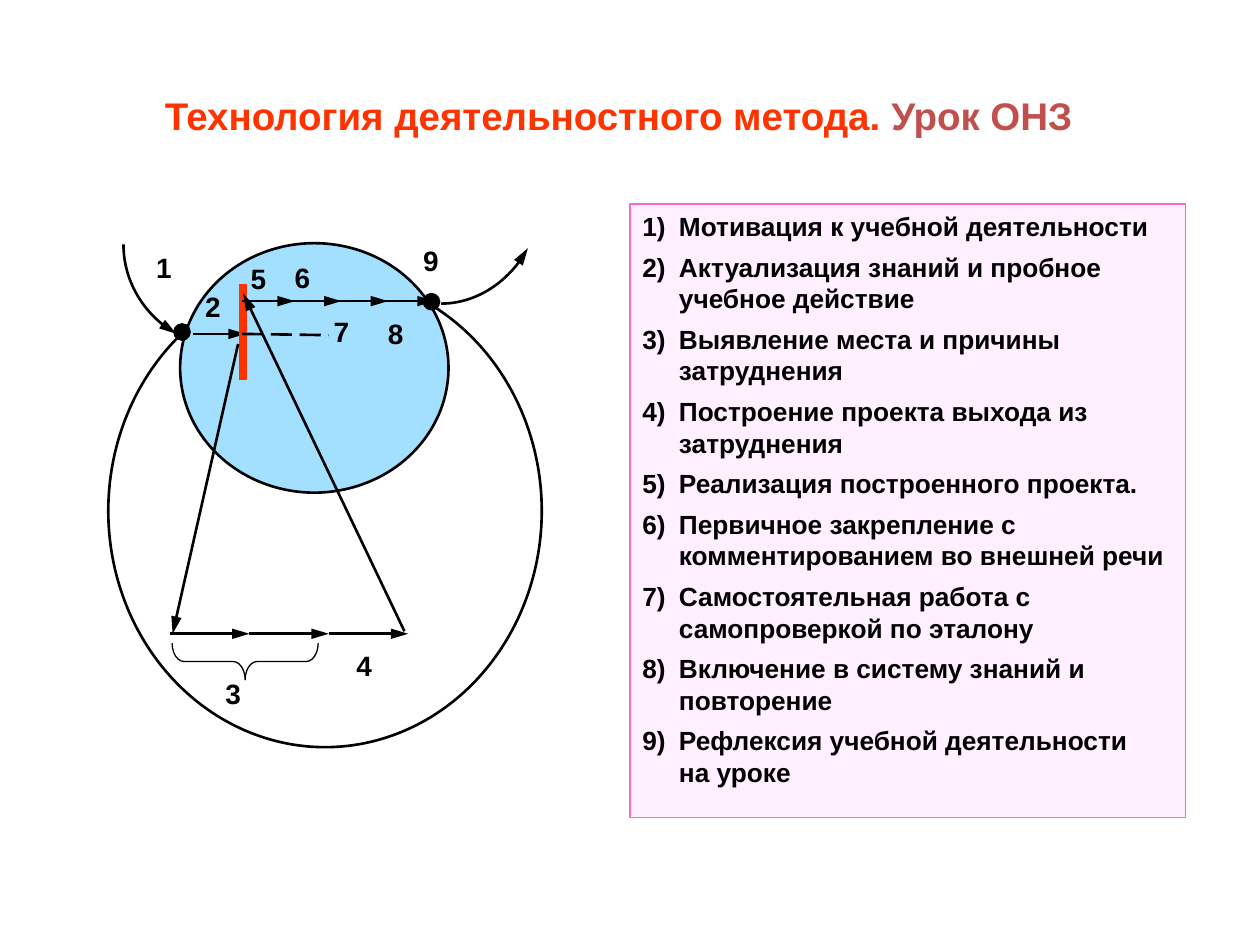
"""Build the lesson-structure slide: a cycle diagram beside its nine stages."""
from lxml import etree
from pptx import Presentation
from pptx import util as u
from pptx.dml.color import RGBColor
from pptx.enum import dml, shapes, text
from pptx.oxml import ns

BLACK = RGBColor(0x00, 0x00, 0x00)
WHITE = RGBColor(0xFF, 0xFF, 0xFF)
ORANGE = RGBColor(0xFF, 0x33, 0x00)
BRICK = RGBColor(0xC0, 0x50, 0x4D)
SKY = RGBColor(0xA3, 0xE0, 0xFF)
BLUSH = RGBColor(0xFF, 0xEF, 0xFF)
PINK = RGBColor(0xFF, 0x66, 0xCC)

STAGES = [
    "Мотивация к учебной деятельности",
    "Актуализация знаний и пробное учебное действие",
    "Выявление места и причины затруднения",
    "Построение проекта выхода из затруднения",
    "Реализация построенного проекта.",
    "Первичное закрепление с комментированием во внешней речи",
    "Самостоятельная работа с самопроверкой по эталону",
    "Включение в систему знаний и повторение",
    "Рефлексия учебной деятельности",
]
LABELS = {
    "1": (1.14, 1.94), "2": (1.53, 2.25), "5": (1.89, 2.03),
    "6": (2.24, 2.02), "9": (3.26, 1.88), "8": (2.98, 2.46),
    "3": (1.69, 5.32), "4": (2.73, 5.1), "7": (2.55, 2.45),
}


class Diagram:
    """Hold the font, the line weight and the current slide."""

    def __init__(self, s, font="Arial", weight=1.5):
        self.s, self.font, self.weight = s, font, weight

    def outline(self, sp, color, weight=None, arrow=False):
        sp.line.color.rgb = color
        sp.line.width = u.Pt(weight or self.weight)
        if arrow:
            ln = sp.line._get_or_add_ln()
            etree.SubElement(ln, ns.qn("a:tailEnd"), type="triangle", w="med", len="lg")

    def shape(self, kind, box, fill=None, line=None, weight=None):
        sp = self.s.shapes.add_shape(kind, *map(u.Inches, box))
        sp.shadow.inherit = False
        if fill is None:
            sp.fill.background()
        else:
            sp.fill.solid()
            sp.fill.fore_color.rgb = fill
        if line is None:
            sp.line.fill.background()
        else:
            self.outline(sp, line, weight)
        return sp

    def line(self, start, end, color=BLACK, weight=None, arrow=False, dash=None):
        c = self.s.shapes.add_connector(
            shapes.MSO_CONNECTOR.STRAIGHT, *map(u.Inches, start + end))
        if dash:
            c.line.dash_style = dash
        self.outline(c, color, weight, arrow)
        etree.SubElement(c._element.spPr, ns.qn("a:effectLst"))

    def curve(self, p0, p1, p2, p3, steps=24):
        points = []
        for i in range(steps + 1):
            t = i / steps
            k = ((1 - t) ** 3, 3 * t * (1 - t) ** 2, 3 * t * t * (1 - t), t ** 3)
            points.append(tuple(
                u.Inches(sum(a * b for a, b in zip(k, axis)))
                for axis in zip(p0, p1, p2, p3)))
        fb = self.s.shapes.build_freeform(*points[0])
        fb.add_line_segments(points[1:], close=False)
        sp = fb.convert_to_shape()
        sp.shadow.inherit = False
        sp.fill.background()
        self.outline(sp, BLACK, arrow=True)

    def run(self, p, words, size, color=BLACK):
        r = p.add_run()
        r.text = words
        r.font.name, r.font.size, r.font.bold = self.font, u.Pt(size), True
        r.font.color.rgb = color

    def label(self, words, at):
        sp = self.s.shapes.add_textbox(*map(u.Inches, at + (0.66, 0.59)))
        tf = sp.text_frame
        tf.word_wrap = True
        self.run(tf.paragraphs[0], words, 16)

    def title(self, box, runs):
        tf = self.shape(shapes.MSO_SHAPE.RECTANGLE, box, WHITE).text_frame
        tf.word_wrap = True
        tf.margin_right = u.Inches(0.36)
        tf.vertical_anchor = text.MSO_ANCHOR.TOP
        p = tf.paragraphs[0]
        p.alignment = text.PP_ALIGN.CENTER
        for words, color in runs:
            self.run(p, words, 22, color)

    def stages(self, box, items, ending):
        tf = self.shape(shapes.MSO_SHAPE.RECTANGLE, box, BLUSH, PINK, 0.75).text_frame
        tf.word_wrap = True
        tf.vertical_anchor = text.MSO_ANCHOR.TOP
        indent = u.Inches(0.29)
        rows = [(f"{n})\t{item}", -indent) for n, item in enumerate(items, 1)]
        rows.append((ending, 0))
        for i, (words, first) in enumerate(rows):
            p = tf.add_paragraph() if i else tf.paragraphs[0]
            p.alignment = text.PP_ALIGN.LEFT
            p.space_after = u.Pt(5.25 if i < len(items) - 1 else 0)
            pPr = p._p.get_or_add_pPr()
            pPr.set("marL", str(indent))
            pPr.set("indent", str(first))
            self.run(p, words, 15)


def main():
    prs = Presentation()
    prs.slide_width, prs.slide_height = u.Inches(10), u.Inches(7.5)
    d = Diagram(prs.slides.add_slide(prs.slide_layouts[6]))
    oval = shapes.MSO_SHAPE.OVAL

    d.title((0.59, 0.68, 8.9, 0.47),
            [("Технология деятельностного метода. ", ORANGE), ("Урок ОНЗ", BRICK)])

    d.shape(oval, (0.86, 2.18, 3.44, 3.75), line=BLACK)
    d.shape(oval, (1.43, 1.93, 2.13, 1.98), SKY, BLACK)
    for x, y in ((3.36, 2.33), (1.38, 2.57)):
        d.shape(oval, (x, y, 0.13, 0.13), BLACK, BLACK, 0.75)

    d.line((1.53, 2.65), (1.95, 2.65), arrow=True)
    d.line((1.93, 2.25), (1.93, 3.02), ORANGE, 4.5)
    for i in range(3):
        x = 1.35 + 0.63 * i
        d.line((x, 5.03), (x + 0.63, 5.03), arrow=True)
    d.line((1.92, 2.65), (2.61, 2.66), dash=dml.MSO_LINE.LONG_DASH)
    for i in range(4):
        x = 1.92 + 0.37 * i
        d.line((x, 2.39), (x + 0.42, 2.39), arrow=True)

    brace = d.shape(shapes.MSO_SHAPE.RIGHT_BRACE, (1.8, 4.67, 0.29, 1.16),
                    line=BLACK, weight=0.75)
    brace.rotation = 90
    brace.adjustments[0] = 0.33

    d.curve((0.98, 1.94), (0.98, 2.23), (1.14, 2.5), (1.4, 2.65))
    d.curve((3.5, 2.41), (3.78, 2.41), (4.04, 2.24), (4.19, 1.97))
    d.line((1.89, 2.73), (1.37, 5.03), arrow=True)
    d.line((3.21, 5.01), (1.93, 2.33), arrow=True)
    for words, at in LABELS.items():
        d.label(words, at)

    d.stages((5, 1.62, 4.41, 4.87), STAGES, "на уроке")
    prs.save("out.pptx")


if __name__ == "__main__":
    main()
